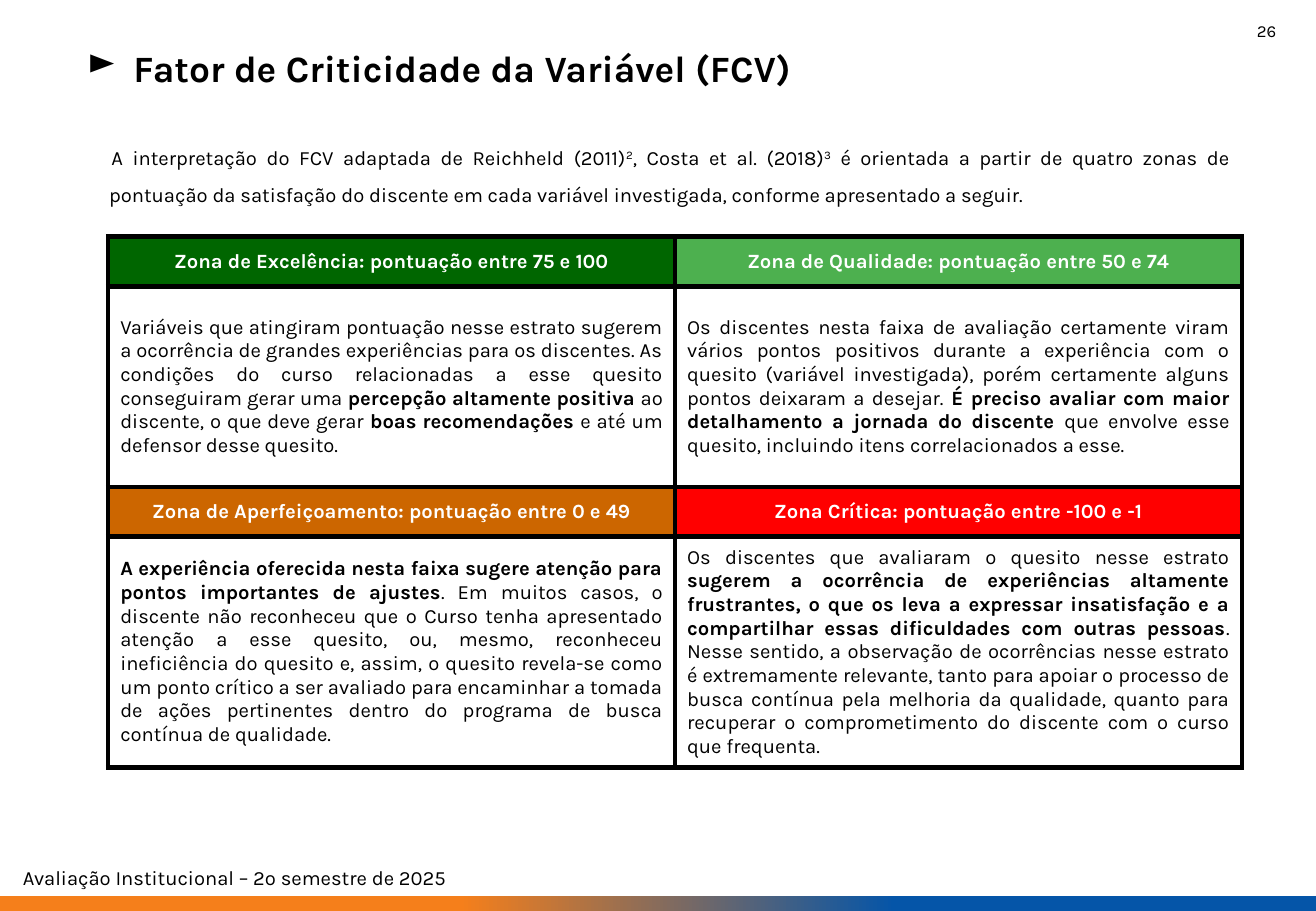
from lxml import etree
from pptx import Presentation
from pptx.dml.color import RGBColor
from pptx.enum.shapes import MSO_SHAPE
from pptx.enum.text import MSO_ANCHOR, PP_ALIGN
from pptx.oxml import parse_xml
from pptx.oxml.ns import nsdecls, qn
from pptx.util import Cm, Pt

RECT = MSO_SHAPE.RECTANGLE
MIDDLE = MSO_ANCHOR.MIDDLE
CENTER, RIGHT, JUSTIFY = PP_ALIGN.CENTER, PP_ALIGN.RIGHT, PP_ALIGN.JUSTIFY
BLACK, WHITE = "000000", "FFFFFF"
ORANGE, BLUE = "F57F1B", "0555A8"
WIDTH, HEIGHT = 27.51, 19.05
ROWS = (1.04, 4.19, 1.04, 4.83)
COL = 11.85

INTRO = (
    "A interpretação do FCV adaptada de Reichheld (2011)*2*, Costa et al. (2018)*3* é orientada "
    "a partir de quatro zonas de pontuação da satisfação do discente em cada variável investigada, "
    "conforme apresentado a seguir."
)
ZONES = (
    ("Zona de Excelência: pontuação entre 75 e 100", "006600",
     "Variáveis que atingiram pontuação nesse estrato sugerem a ocorrência de grandes experiências "
     "para os discentes. As condições do curso relacionadas a esse quesito conseguiram gerar uma "
     "*percepção altamente positiva *ao discente, o que deve gerar *boas recomendações *e até um "
     "defensor desse quesito."),
    ("Zona de Qualidade: pontuação entre 50 e 74", "4DB04F",
     "Os discentes nesta faixa de avaliação certamente viram vários pontos positivos durante a "
     "experiência com o quesito (variável investigada), porém certamente alguns pontos deixaram a "
     "desejar. *É preciso avaliar com maior detalhamento a jornada do discente *que envolve esse "
     "quesito, incluindo itens correlacionados a esse."),
    ("Zona de Aperfeiçoamento: pontuação entre 0 e 49", "CC6600",
     "*A experiência oferecida nesta faixa sugere atenção para pontos importantes de ajustes*. "
     "Em muitos casos, o discente não reconheceu que o Curso tenha apresentado atenção a esse "
     "quesito, ou, mesmo, reconheceu ineficiência do quesito e, assim, o quesito revela-se como um "
     "ponto crítico a ser avaliado para encaminhar a tomada de ações pertinentes dentro do programa "
     "de busca contínua de qualidade."),
    ("Zona Crítica: pontuação entre -100 e -1", "FF0000",
     "Os discentes que avaliaram o quesito nesse estrato *sugerem a ocorrência de experiências "
     "altamente frustrantes, o que os leva a expressar insatisfação e a compartilhar essas "
     "dificuldades com outras pessoas*. Nesse sentido, a observação de ocorrências nesse estrato é "
     "extremamente relevante, tanto para apoiar o processo de busca contínua pela melhoria da "
     "qualidade, quanto para recuperar o comprometimento do discente com o curso que frequenta."),
)


def color(code):
    """Turn a hex string into a colour."""
    return RGBColor.from_string(code)


def style(run, size, code, bold):
    """Format one run."""
    run.font.name = "Karla"
    run.font.size = Pt(size)
    run.font.bold = bold
    run.font.color.rgb = color(code)


def write(para, text, size=12, code=BLACK, bold=False, raised=False):
    """Write text whose parts between asterisks are bold, or raised if asked."""
    for i, part in enumerate(text.split("*")):
        if part:
            run = para.add_run()
            run.text = part
            marked = i % 2 == 1
            style(run, size, code, bold or (marked and not raised))
            if marked and raised:
                run._r.get_or_add_rPr().set("baseline", "30000")


def add_text(slide, left, top, width, height):
    """Add a wrapping text box and return its frame."""
    frame = slide.shapes.add_textbox(Cm(left), Cm(top), Cm(width), Cm(height)).text_frame
    frame.word_wrap = True
    return frame


def indent(para, left, first):
    """Set the left margin and the first line indent."""
    props = para._p.get_or_add_pPr()
    props.set("marL", str(Cm(left)))
    props.set("indent", str(Cm(first)))
    return props


def add_title(slide, text):
    """Add the title with its arrow bullet."""
    frame = add_text(slide, 0.71, 0.76, 24.31, 1.3)
    frame.vertical_anchor = MIDDLE
    para = frame.paragraphs[0]
    props = indent(para, 1.83, -0.97)
    tint = etree.SubElement(props, qn("a:buClr"))
    etree.SubElement(tint, qn("a:srgbClr")).set("val", BLACK)
    etree.SubElement(props, qn("a:buChar")).set("char", "►")
    write(para, text, 22, bold=True)


def add_intro(slide):
    """Add the paragraph above the table."""
    para = add_text(slide, 1.83, 2.67, 24.13, 1.7).paragraphs[0]
    indent(para, 0.2, 0.05)
    para.alignment = JUSTIFY
    para.line_spacing = 1.5
    write(para, INTRO, raised=True)


def add_edges(cell):
    """Draw a black line on each side of a cell."""
    props = cell._tc.get_or_add_tcPr()
    for side in "LRTB":
        props.append(parse_xml(
            f'<a:ln{side} {nsdecls("a")} w="{Pt(3)}"><a:solidFill>'
            f'<a:srgbClr val="{BLACK}"/></a:solidFill></a:ln{side}>'))


def fill_cell(cell, text, align, code, bold, back=None):
    """Write and paint one cell."""
    add_edges(cell)
    cell.vertical_anchor = MIDDLE
    if back:
        cell.fill.solid()
        cell.fill.fore_color.rgb = color(back)
    else:
        cell.fill.background()
    para = cell.text_frame.paragraphs[0]
    para.alignment = align
    write(para, text, code=code, bold=bold)


def add_zones(slide):
    """Add the table of four zones, each a head over a body."""
    table = slide.shapes.add_table(
        len(ROWS), 2, Cm(2.26), Cm(4.95), Cm(2 * COL), Cm(sum(ROWS))).table
    table.first_row = table.horz_banding = False
    for col in table.columns:
        col.width = Cm(COL)
    for row, height in zip(table.rows, ROWS):
        row.height = Cm(height)
    for i, (head, back, body) in enumerate(ZONES):
        row, col = i // 2 * 2, i % 2
        fill_cell(table.cell(row, col), head, CENTER, WHITE, True, back)
        fill_cell(table.cell(row + 1, col), body, JUSTIFY, BLACK, False)


def add_band(slide):
    """Add the shaded band at the foot."""
    band = slide.shapes.add_shape(RECT, 0, Cm(HEIGHT - 0.32), Cm(WIDTH), Cm(0.32))
    band.shadow.inherit = False
    band.line.fill.background()
    band.fill.gradient()
    band.fill.gradient_angle = 0
    for stop, place, code in zip(band.fill.gradient_stops, (0.35, 0.68), (ORANGE, BLUE)):
        stop.position = place
        stop.color.rgb = color(code)


def main():
    """Build the slide and save it."""
    deck = Presentation()
    deck.slide_width, deck.slide_height = Cm(WIDTH), Cm(HEIGHT)
    slide = deck.slides.add_slide(deck.slide_layouts[6])
    add_band(slide)
    foot = add_text(slide, 0.23, 17.96, 27.05, 0.76)
    write(foot.paragraphs[0], "Avaliação Institucional – 2º semestre de 2025")
    add_title(slide, "Fator de Criticidade da Variável (FCV)")
    add_intro(slide)
    add_zones(slide)
    page = add_text(slide, 21.11, 0.3, 5.82, 1.02).paragraphs[0]
    page.alignment = RIGHT
    write(page, "26", 10)
    deck.save("out.pptx")


if __name__ == "__main__":
    main()
